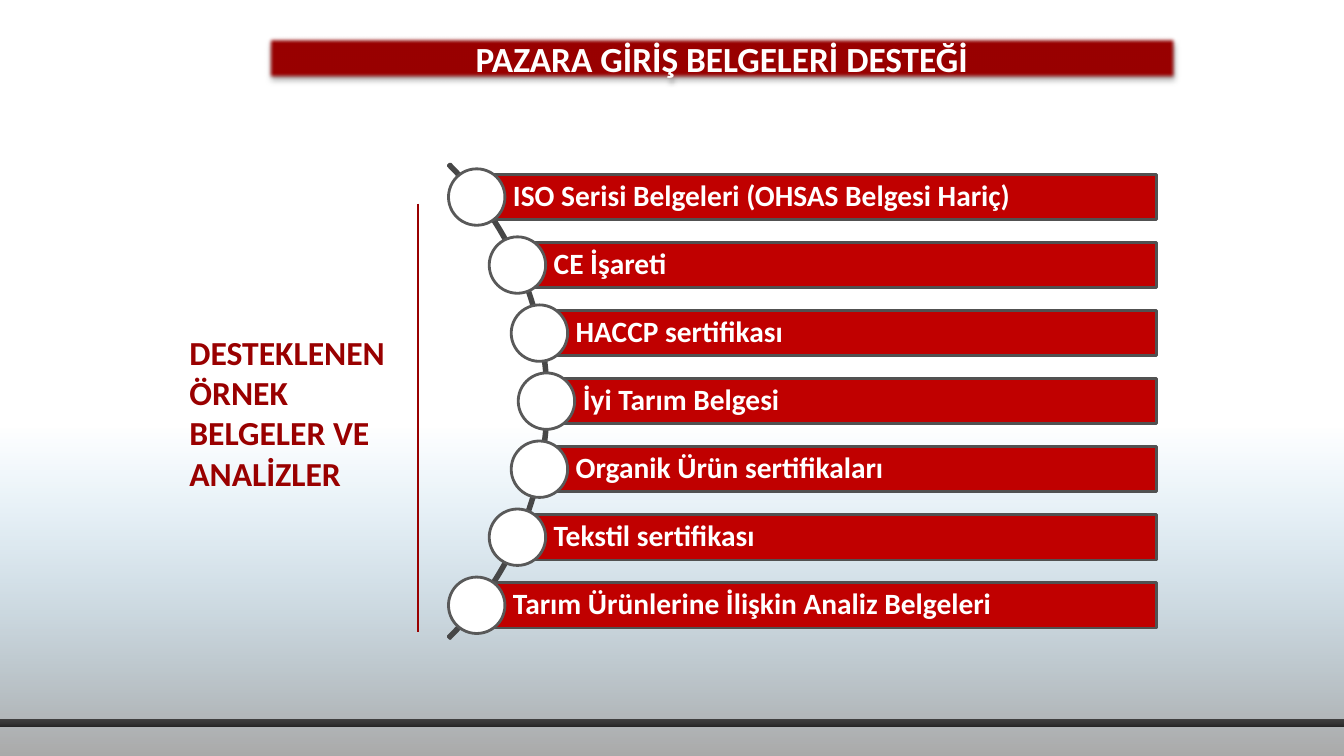
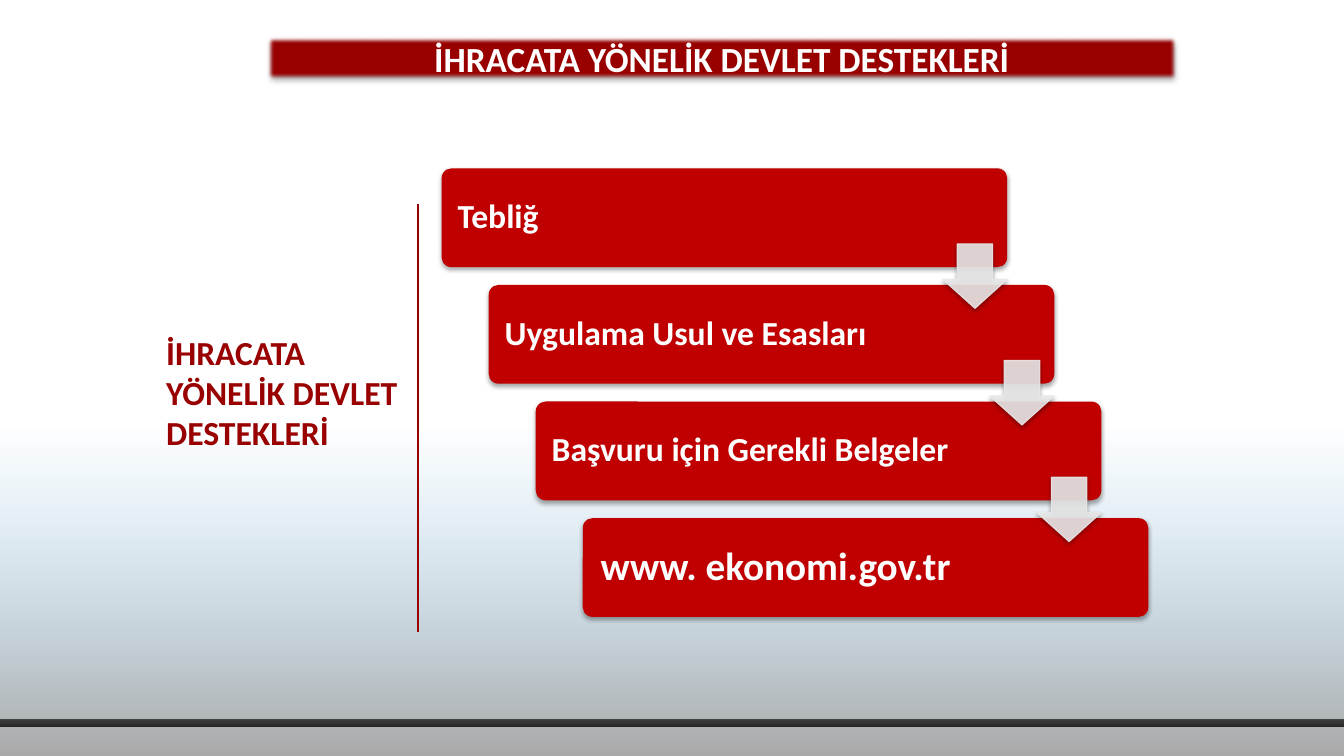
from math import sqrt

from lxml.etree import SubElement as Sub
from pptx import Presentation
from pptx.dml.color import RGBColor as Rgb
from pptx.enum.shapes import MSO_CONNECTOR as Conn, MSO_SHAPE as Geo
from pptx.enum.text import MSO_ANCHOR as Anchor, PP_ALIGN as Align
from pptx.oxml import parse_xml
from pptx.oxml.ns import nsdecls, qn
from pptx.util import Pt

# Content
CERTS = {
    "title": "PAZARA GİRİŞ BELGELERİ DESTEĞİ",
    "side": "DESTEKLENEN ÖRNEK BELGELER VE ANALİZLER",
    "box": (178, 324, 228, 171),
    "items": [
        "ISO Serisi Belgeleri (OHSAS Belgesi Hariç)",
        "CE İşareti",
        "HACCP sertifikası",
        "İyi Tarım Belgesi",
        "Organik Ürün sertifikaları",
        "Tekstil sertifikası",
        "Tarım Ürünlerine İlişkin Analiz Belgeleri",
    ],
}
AID = {
    "title": "İHRACATA YÖNELİK DEVLET DESTEKLERİ",
    "side": "İHRACATA YÖNELİK DEVLET DESTEKLERİ",
    "box": (155, 324, 260, 131),
    "items": [  # text, size, inset
        ("Tebliğ", 24, 13),
        ("Uygulama Usul ve Esasları", 24, 13),
        ("Başvuru için Gerekli Belgeler", 24, 13),
        ("www. ekonomi.gov.tr", 28, 15),
    ],
}

# Theme: colours, type sizes, gradients (stop, colour, opacity), shadows
THEME = {
    "font": "Calibri", "title": 25.2, "side": 24, "bar": 21,
    "deep": "990000", "red": "C00000", "white": "FFFFFF",
    "arc": "474747", "edge": "515151", "ring": "595959", "arrow": "E8E8E8",
    "fade": ([(0, "6CB9E7", 0), (100, "808080", 67)], 90),
    "band": ([(0, "262626", 100), (50, "363636", 100), (100, "404040", 100)], 270),
    "lift": (32, 3.5, 2.2),  # opacity, blur, distance
    "drop": (35, 3.1, 1.8),
}
WIDE, HIGH = 1333, 750


def px(n):
    return round(n * 9144)


def rgb(name):
    return Rgb.from_string(THEME[name])


# Drawing helpers
def shape(slide, geo, box, fill=None, line=None, width=2, adj=()):
    item = slide.shapes.add_shape(geo, *map(px, box))
    item.shadow.inherit = False
    for i, val in enumerate(adj):
        item.adjustments[i] = val
    if fill:
        item.fill.solid()
        item.fill.fore_color.rgb = rgb(fill)
    else:
        item.fill.background()
    if line:
        item.line.color.rgb = rgb(line)
        item.line.width = Pt(width)
    else:
        item.line.fill.background()
    return item


def grade(item, key):
    stops, ang = THEME[key]
    body = "".join(
        f'<a:gs pos="{pos * 1000}"><a:srgbClr val="{col}">'
        f'<a:alpha val="{alpha * 1000}"/></a:srgbClr></a:gs>'
        for pos, col, alpha in stops)
    props = item._element.spPr
    props.replace(props.find(qn("a:noFill")), parse_xml(
        f'<a:gradFill {nsdecls("a")} rotWithShape="1"><a:gsLst>{body}</a:gsLst>'
        f'<a:lin ang="{ang * 60000}" scaled="0"/></a:gradFill>'))


def shade(item, key, soft=0):
    alpha, blur, dist = THEME[key]
    effects = item._element.spPr.find(qn("a:effectLst"))
    drop = Sub(effects, qn("a:outerShdw"), blurRad=str(Pt(blur)),
               dist=str(Pt(dist)), dir="5400000", rotWithShape="0")
    tint = Sub(drop, qn("a:srgbClr"), val="000000")
    Sub(tint, qn("a:alpha"), val=str(alpha * 1000))
    if soft:
        Sub(effects, qn("a:softEdge"), rad=str(Pt(soft)))


def write(item, text, size, color="white", pads=(10, 5, 10, 5),
          align=Align.LEFT, anchor=Anchor.MIDDLE, space=1.0):
    frame = item.text_frame
    frame.word_wrap = True
    frame.vertical_anchor = anchor
    (frame.margin_left, frame.margin_top,
     frame.margin_right, frame.margin_bottom) = map(px, pads)
    para = frame.paragraphs[0]
    para.alignment = align
    para.line_spacing = space
    run = para.add_run()
    run.text = text
    font = run.font
    font.name, font.size, font.bold = THEME["font"], Pt(size), True
    font.color.rgb = rgb(color)


# Shared frame: backdrop, rule, title and side heading
def start(prs, data):
    slide = prs.slides.add_slide(prs.slide_layouts[6])
    grade(shape(slide, Geo.RECTANGLE, (0, 422, WIDE, 328)), "fade")
    grade(shape(slide, Geo.RECTANGLE, (0, 713, WIDE, 8)), "band")
    rule = slide.shapes.add_connector(
        Conn.STRAIGHT, px(415), px(202), px(415), px(627))
    rule.line.color.rgb = rgb("deep")
    rule.line.width = Pt(1.5)
    Sub(rule._element.spPr, qn("a:effectLst"))
    title = shape(slide, Geo.RECTANGLE, (265, 36, 902, 43), "deep")
    shade(title, "lift", soft=2.5)
    write(title, data["title"], THEME["title"], align=Align.CENTER)
    side = slide.shapes.add_textbox(*map(px, data["box"]))
    write(side, data["side"], THEME["side"], "deep", anchor=Anchor.TOP)
    return slide


# Bars whose left ends follow an arc
def curve(slide, items):
    midx, midy, rad, reach = 211, 398, 333, 331
    span, right, tall, dot = 405, 1147, 45, 56
    shape(slide, Geo.BLOCK_ARC, (midx - rad, midy - rad, 2 * rad, 2 * rad),
          line="arc", adj=(189, 27, 0.004))
    for i, text in enumerate(items):
        dy = span * (i / (len(items) - 1) - 0.5)
        x, y = midx + sqrt(reach ** 2 - dy ** 2), midy + dy
        bar = shape(slide, Geo.RECTANGLE,
                    (x, y - tall / 2, right - x, tall), "red", "edge")
        write(bar, text, THEME["bar"], pads=(36, 6, 6, 6), space=0.9)
        shape(slide, Geo.OVAL, (x - dot / 2, y - dot / 2, dot, dot),
              "white", "ring")


# Staircase of boxes joined by block arrows
def stairs(slide, items):
    wide, tall, tip = 561, 98, 64
    gaps = len(items) - 1
    spots = [(438 + 140 * i / gaps, 167 + 347 * i / gaps)
             for i in range(len(items))]
    for (x, y), (text, size, pad) in zip(spots, items):
        step = shape(slide, Geo.ROUNDED_RECTANGLE, (x, y, wide, tall),
                     "red", adj=(0.1,))
        shade(step, "drop")
        write(step, text, size, pads=(pad,) * 4, space=0.9)
    for x, y in spots[:-1]:
        arrow = shape(slide, Geo.DOWN_ARROW, (x + wide - tip, y + 75, tip, tip),
                      "arrow", "arrow", 0.75, (0.55, 0.45))
        for tint in arrow._element.spPr.iter(qn("a:srgbClr")):
            Sub(tint, qn("a:alpha"), val="90000")
        shade(arrow, "drop")


def main():
    prs = Presentation()
    prs.slide_width, prs.slide_height = px(WIDE), px(HIGH)
    for data, draw in ((CERTS, curve), (AID, stairs)):
        draw(start(prs, data), data["items"])
    prs.save("out.pptx")


if __name__ == "__main__":
    main()
